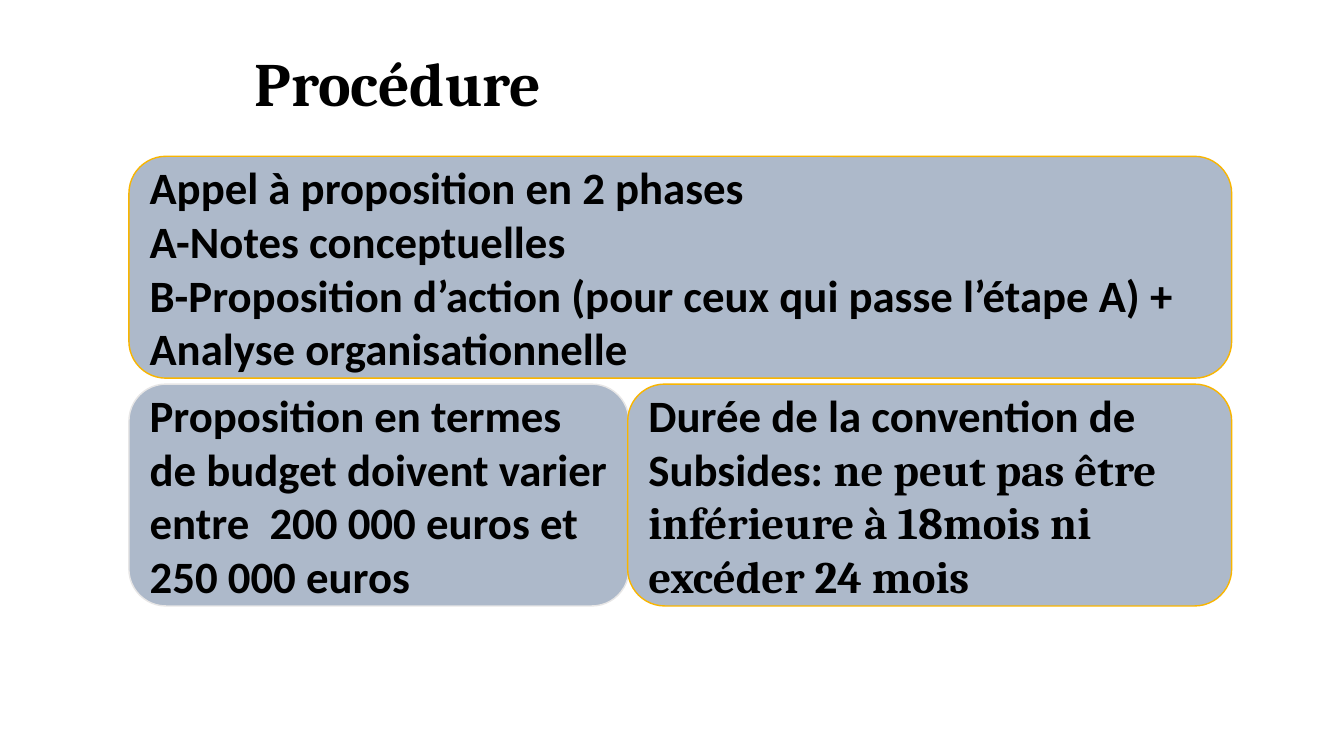
from pptx import Presentation
from pptx.dml.color import RGBColor
from pptx.enum.shapes import MSO_SHAPE
from pptx.enum.text import MSO_ANCHOR, PP_ALIGN
from pptx.util import Cm, Pt

ROUNDED = MSO_SHAPE.ROUNDED_RECTANGLE
MIDDLE = MSO_ANCHOR.MIDDLE
LEFT = PP_ALIGN.LEFT
BLACK = RGBColor(0x00, 0x00, 0x00)
BLUE_GREY = RGBColor(0xAD, 0xB9, 0xCA)
GOLD = RGBColor(0xF9, 0xB5, 0x00)
LIGHT_GREY = RGBColor(0xE7, 0xE6, 0xE6)

prs = Presentation()
prs.slide_width = Cm(33.87)
prs.slide_height = Cm(19.05)
slide = prs.slides.add_slide(prs.slide_layouts[6])

title = slide.shapes.add_textbox(Cm(6.17), Cm(1.02), Cm(20.73), Cm(4.01))
title.text_frame.word_wrap = True
heading = title.text_frame.paragraphs[0]
heading.text = "Procédure"
heading.font.name = "Cambria"
heading.font.size = Pt(44)
heading.font.bold = True
heading.font.color.rgb = BLACK

margin_left, phases_top, conditions_top = 3.25, 3.94, 9.68
full_width, budget_width, panel_height = 27.79, 12.6, 5.59
duration_left = 15.82
duration_width = margin_left + full_width - duration_left

panels = [
    (margin_left, phases_top, full_width, GOLD, [
        [("Appel à proposition en 2 phases", "Calibri")],
        [("A-Notes conceptuelles", "Calibri")],
        [("B-Proposition d’action (pour ceux qui passe l’étape A) + "
          "Analyse organisationnelle", "Calibri")],
    ]),
    (margin_left, conditions_top, budget_width, LIGHT_GREY, [
        [("Proposition en termes de budget doivent varier entre  "
          "200 000 euros et 250 000 euros", "Calibri")],
    ]),
    (duration_left, conditions_top, duration_width, GOLD, [
        [("Durée de la convention de Subsides: ", "Calibri"),
         ("ne peut pas être inférieure à 18mois ni excéder 24 mois", "Cambria")],
    ]),
]

for left, top, width, border, paragraphs in panels:
    panel = slide.shapes.add_shape(
        ROUNDED, Cm(left), Cm(top), Cm(width), Cm(panel_height))
    panel.shadow.inherit = False
    panel.fill.solid()
    panel.fill.fore_color.rgb = BLUE_GREY
    panel.line.color.rgb = border
    panel.line.width = Pt(1)
    frame = panel.text_frame
    frame.word_wrap = True
    frame.vertical_anchor = MIDDLE
    for index, pieces in enumerate(paragraphs):
        paragraph = frame.add_paragraph() if index else frame.paragraphs[0]
        paragraph.alignment = LEFT
        paragraph.font.size = Pt(32)
        paragraph.font.bold = True
        paragraph.font.color.rgb = BLACK
        for words, typeface in pieces:
            run = paragraph.add_run()
            run.text = words
            run.font.name = typeface

prs.save("out.pptx")
